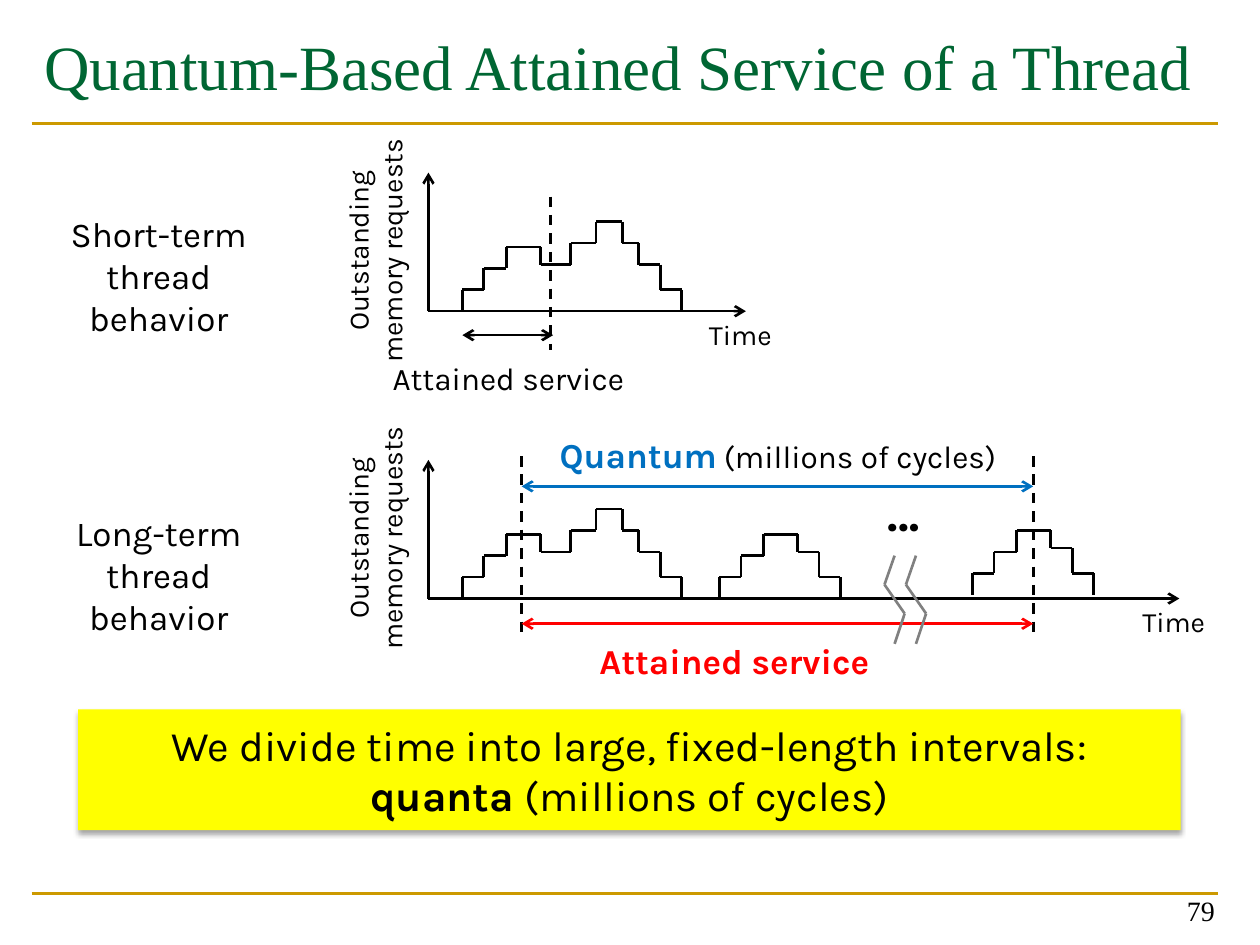
from lxml import etree
from pptx import Presentation
from pptx.dml.color import RGBColor
from pptx.enum.dml import MSO_LINE
from pptx.enum.shapes import MSO_CONNECTOR, MSO_SHAPE
from pptx.enum.text import MSO_ANCHOR, MSO_AUTO_SIZE, PP_ALIGN
from pptx.oxml.ns import qn
from pptx.util import Emu, Pt

STRAIGHT = MSO_CONNECTOR.STRAIGHT
RECT = MSO_SHAPE.RECTANGLE
DASH = MSO_LINE.DASH
LEFT, CENTER, RIGHT = PP_ALIGN.LEFT, PP_ALIGN.CENTER, PP_ALIGN.RIGHT
TOP, MIDDLE, BOTTOM = MSO_ANCHOR.TOP, MSO_ANCHOR.MIDDLE, MSO_ANCHOR.BOTTOM
GROW, FIXED = MSO_AUTO_SIZE.SHAPE_TO_FIT_TEXT, MSO_AUTO_SIZE.NONE

PX = 9144
SANS, SERIF = "Karla", "Times New Roman"
BLACK, GOLD, GREEN, GRAY = "000000", "CC9900", "006633", "808080"
RED, BLUE, YELLOW = "FF0000", "0070C0", "FFFF00"

TWIN_PEAK = [(0, 17), (17, 34), (35, 51), (62, 37), (86, 54),
             (106, 71), (127, 54), (140, 37), (157, 17), (174, 0)]
SINGLE_PEAK = [(0, 17), (17, 34), (35, 51), (62, 37), (79, 17), (96, 0)]


def px(*values):
    """Turn px lengths into EMU."""
    return [Emu(int(v * PX)) for v in values]


def rgb(value):
    """Turn a hex string into a colour."""
    return RGBColor.from_string(value)


def write(tf, text, size=16, color=BLACK, font=SANS, bold=False, align=CENTER,
          anchor=TOP, fit=GROW):
    """Fill a text frame; text is a string or a list of paragraphs of (text, format) runs."""
    tf.word_wrap = True
    tf.auto_size = fit
    tf.vertical_anchor = anchor
    paragraphs = [[(text, {})]] if isinstance(text, str) else text
    for i, runs in enumerate(paragraphs):
        p = tf.add_paragraph() if i else tf.paragraphs[0]
        p.alignment = align
        for content, fmt in runs:
            for j, part in enumerate(content.split("\n")):
                if j:
                    p.add_line_break()
                r = p.add_run()
                r.text = part
                r.font.name = font
                r.font.size = Pt(fmt.get("size", size))
                r.font.bold = fmt.get("bold", bold)
                r.font.color.rgb = rgb(fmt.get("color", color))


def add_text(s, box, text, rotation=0, **fmt):
    """Add a text box."""
    sp = s.shapes.add_textbox(*px(*box))
    sp.rotation = rotation
    write(sp.text_frame, text, **fmt)


def add_line(s, x1, y1, x2, y2, color=BLACK, dash=None, ends=()):
    """Add a straight line with arrowheads at the named ends."""
    cxn = s.shapes.add_connector(STRAIGHT, *px(x1, y1, x2, y2))
    cxn.line.color.rgb = rgb(color)
    cxn.line.width = Pt(1.5)
    if dash:
        cxn.line.dash_style = dash
    ln = cxn.line._get_or_add_ln()
    for end in ends:
        etree.SubElement(ln, qn(f"a:{end}"), type="arrow")
    etree.SubElement(cxn._element.spPr, qn("a:effectLst"))


def add_span(s, x1, x2, y, color=BLACK):
    """Add a level double-headed arrow."""
    add_line(s, x1, y, x2, y, color, ends=("headEnd", "tailEnd"))


def add_stairs(s, x, base, steps):
    """Draw a stepped outline from (offset, height) pairs above a base line."""
    height = 0
    for i, (dx, level) in enumerate(steps):
        add_line(s, x + dx, base - height, x + dx, base - level)
        if i + 1 < len(steps):
            add_line(s, x + dx, base - level, x + steps[i + 1][0], base - level)
        height = level


def add_frame(s, box, title, number):
    """Place the title, the two rules and the slide number."""
    x, y, w, h = box
    sp = s.shapes.title
    sp.left, sp.top, sp.width, sp.height = px(x, y, w, 117)
    write(sp.text_frame, title, size=36, color=GREEN, font=SERIF, align=LEFT, fit=FIXED)
    for rule in (y + 81, y + h - 32):
        add_line(s, x, rule, x + w, rule, GOLD)
    add_text(s, (x + w - 226, y + h - 50, 233, 50), number, font=SERIF,
             align=RIGHT, anchor=BOTTOM, fit=FIXED)


def add_plot(s, box, label, label_dy):
    """Draw a labelled pair of axes with the twin-peak outline; return the origin."""
    x, y, w, h = box
    ox, base = x + 323, y + h
    add_text(s, (x, y + label_dy, 218, 77), label, size=20)
    add_text(s, (x + 175, y + 30, 211, 64), "Outstanding memory requests", rotation=270)
    add_line(s, ox, base, ox, y, ends=("tailEnd",))
    add_line(s, ox, base, x + w, base, ends=("tailEnd",))
    add_text(s, (x + w - 42, base, 75, 16), "Time")
    add_stairs(s, ox + 27, base, TWIN_PEAK)
    return ox, base


def add_short_term(s, box):
    """Draw the short-term row."""
    ox, base = add_plot(s, box, "Short-term\nthread behavior", 27)
    add_line(s, ox + 97, base - 91, ox + 97, base + 31, dash=DASH)
    add_span(s, ox + 27, ox + 99, base + 19)
    add_text(s, (ox - 49, base + 33, 225, 40), "Attained service", size=18)


def add_long_term(s, box):
    """Draw the long-term row with its quantum and time break."""
    ox, base = add_plot(s, box, "Long-term\nthread behavior", 36)
    for dx, dy in ((231, 0), (432, -3)):
        add_stairs(s, ox + dx, base + dy, SINGLE_PEAK)
    start, end = ox + 74, ox + 480
    for x in (start, end):
        add_line(s, x, base - 113, x, base + 28, dash=DASH)
    add_span(s, start, end, base - 89, BLUE)
    add_span(s, start, end, base + 20, RED)
    quantum = [("Quantum", {"size": 20, "color": BLUE, "bold": True}),
               (" ", {}), ("(millions of cycles)", {"size": 18})]
    add_text(s, (start + 8, base - 136, 391, 44), [quantum])
    add_text(s, (start + 41, base + 28, 256, 44), "Attained service",
             size=20, color=RED, bold=True)
    add_text(s, (ox + 340, base - 97, 75, 57), "…", size=28, bold=True)
    zigzag = [(8, -34), (0, -11), (16, 12), (8, 36)]
    for x in (ox + 362, ox + 379):
        for (x1, y1), (x2, y2) in zip(zigzag, zigzag[1:]):
            add_line(s, x + x1, base + y1, x + x2, base + y2, GRAY)


def add_callout(s, box):
    """Place the shadowed summary box."""
    sp = s.shapes.add_shape(RECT, *px(*box))
    sp.shadow.inherit = False
    sp.fill.solid()
    sp.fill.fore_color.rgb = rgb(YELLOW)
    sp.line.fill.background()
    effects = sp._element.spPr.find(qn("a:effectLst"))
    shadow = etree.SubElement(effects, qn("a:outerShdw"), blurRad=str(Pt(3.1)),
                              dist=str(Pt(1.8)), dir="5400000", rotWithShape="0")
    shade = etree.SubElement(shadow, qn("a:srgbClr"), val=BLACK)
    etree.SubElement(shade, qn("a:alpha"), val="35000")
    write(sp.text_frame,
          [[("We divide time into large, fixed-length intervals:", {})],
           [("quanta ", {"bold": True}), ("(millions of cycles)", {})]],
          size=24, anchor=MIDDLE, fit=FIXED)


def main():
    """Build the slide."""
    prs = Presentation()
    prs.slide_width, prs.slide_height = px(1000, 750)
    s = prs.slides.add_slide(prs.slide_layouts[5])
    add_frame(s, (25, 17, 942, 724), "Quantum-Based Attained Service of a Thread", "79")
    add_short_term(s, (17, 137, 575, 110))
    add_callout(s, (62, 563, 875, 96))
    add_long_term(s, (17, 365, 919, 110))
    prs.save("out.pptx")


if __name__ == "__main__":
    main()
